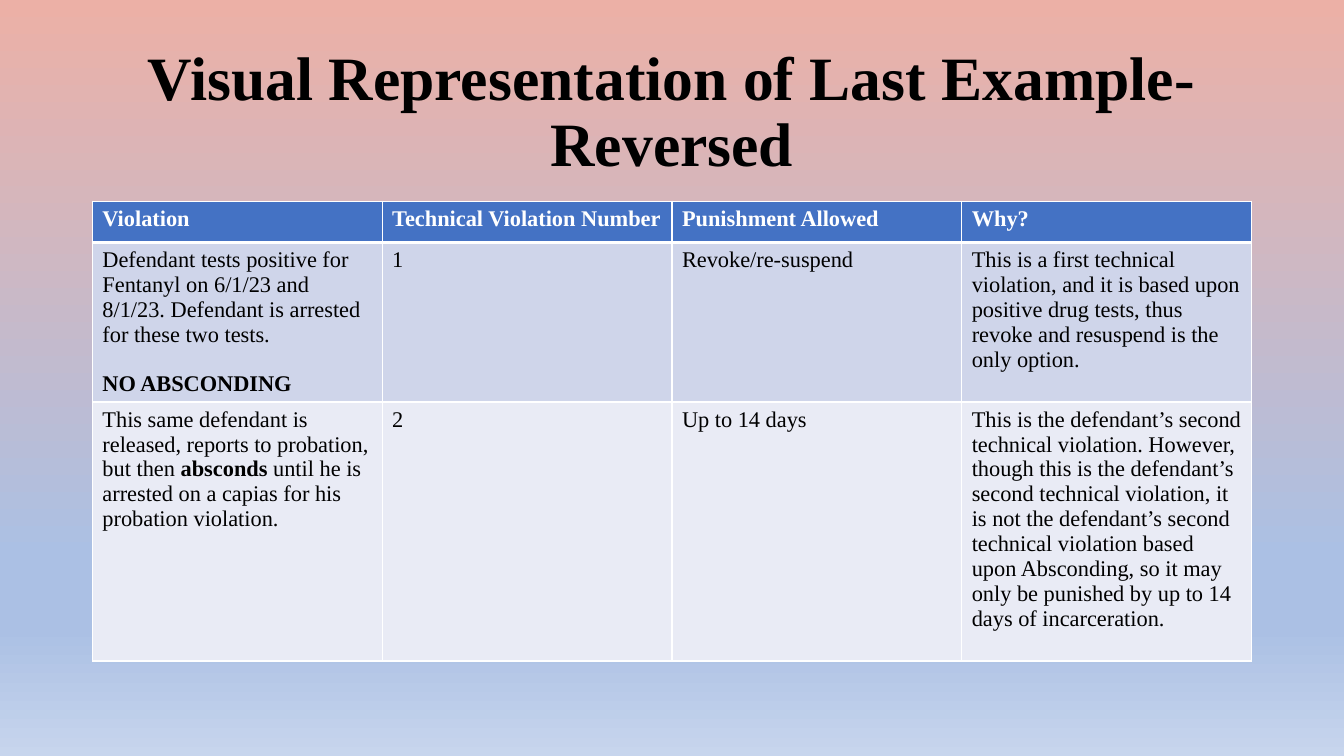
from lxml.etree import SubElement
from pptx import Presentation
from pptx.dml.color import RGBColor as Color
from pptx.enum.text import MSO_ANCHOR as Anchor, MSO_AUTO_SIZE as AutoSize, PP_ALIGN as Align
from pptx.oxml.ns import qn
from pptx.util import Pt

COLORS = {
    "text": "000000", "white": "FFFFFF", "header": "4472C4",
    "odd": "CFD5EA", "even": "E9EBF5",
    "rose": "ECB0A6", "blue": "ABC0E4", "pale": "C7D5ED",
}
GRADIENT = [(0, "rose"), (74, "blue"), (83, "blue"), (100, "pale")]
COLUMN_WIDTH = 207
ROW_HEIGHTS = [29.5, 114, 185]
BLANK_LINE = 17.7

HEADINGS = ["Violation", "Technical Violation Number", "Punishment Allowed", "Why?"]
VIOLATIONS = [
    [
        [
            [("Defendant tests positive for Fentanyl on 6/1/23 and 8/1/23. Defendant is arrested", False)],
            [("for these two tests.", False)],
            [("NO ABSCONDING", True)],
        ],
        [[("1", False)]],
        [[("Revoke/re-suspend", False)]],
        [[("This is a first technical violation, and it is based upon positive drug tests, "
           "thus revoke and resuspend is the only option.", False)]],
    ],
    [
        [[
            ("This same defendant is released, reports to probation, but then ", False),
            ("absconds ", True),
            ("until he is arrested on a capias for his probation violation.", False),
        ]],
        [[("2", False)]],
        [[("Up to 14 days", False)]],
        [[("This is the defendant’s second technical violation. However, though this is "
           "the defendant’s second technical violation, it is not the defendant’s second "
           "technical violation based upon Absconding, so it may only be punished by up "
           "to 14 days of incarceration.", False)]],
    ],
]


def apply(target, values):
    """Set every attribute in values on target."""
    for name, value in values.items():
        setattr(target, name, value)


class SlideBuilder:
    """Hold the style and the current slide."""

    font = "Times New Roman"

    def __init__(self, slide):
        """Keep the slide to draw on."""
        self.slide = slide

    def background(self, stops):
        """Fill the background with a gradient running from top to bottom."""
        fill = self.slide.background.fill
        fill.gradient()
        fill.gradient_angle = 270
        stop_list = next(self.slide.element.iter(qn("a:gsLst")))
        for stop in list(stop_list):
            stop_list.remove(stop)
        for position, color in stops:
            stop = SubElement(stop_list, qn("a:gs"), pos=str(position * 1000))
            SubElement(stop, qn("a:srgbClr"), val=COLORS[color])

    def run(self, paragraph, text, size, color, bold):
        """Add one formatted run to a paragraph."""
        run = paragraph.add_run()
        run.text = text
        apply(run.font, {"name": self.font, "size": Pt(size), "bold": bold})
        run.font.color.rgb = Color.from_string(COLORS[color])

    def title(self, text, left, top, width, height):
        """Place and format the title placeholder."""
        shape = self.slide.shapes.title
        apply(shape, {"left": Pt(left), "top": Pt(top), "width": Pt(width), "height": Pt(height)})
        apply(shape.text_frame, {"word_wrap": True, "auto_size": AutoSize.NONE,
                                 "vertical_anchor": Anchor.MIDDLE})
        paragraph = shape.text_frame.paragraphs[0]
        apply(paragraph, {"alignment": Align.CENTER, "line_spacing": 0.9})
        self.run(paragraph, text, 44, "text", True)

    def borders(self, cell, top, bottom):
        """Draw white borders around a cell."""
        properties = cell._tc.get_or_add_tcPr()
        for side, width in {"L": 1, "R": 1, "T": top, "B": bottom}.items():
            line = SubElement(properties, qn(f"a:ln{side}"), w=str(Pt(width)))
            SubElement(SubElement(line, qn("a:solidFill")), qn("a:srgbClr"), val=COLORS["white"])

    def cell(self, cell, paragraphs, fill, color, top=1, bottom=1):
        """Fill one table cell, setting a closing bold paragraph apart."""
        self.borders(cell, top, bottom)
        cell.fill.solid()
        cell.fill.fore_color.rgb = Color.from_string(COLORS[fill])
        for index, runs in enumerate(paragraphs):
            frame = cell.text_frame
            paragraph = frame.add_paragraph() if index else frame.paragraphs[0]
            if index and runs[0][1]:
                paragraph.space_before = Pt(BLANK_LINE)
            for text, bold in runs:
                self.run(paragraph, text, 16, color, bold)

    def table(self, headings, rows, left, top):
        """Add a table with a header row and banded rows."""
        count = len(headings)
        table = self.slide.shapes.add_table(
            len(rows) + 1, count, Pt(left), Pt(top),
            Pt(COLUMN_WIDTH * count), Pt(sum(ROW_HEIGHTS))).table
        for column in table.columns:
            column.width = Pt(COLUMN_WIDTH)
        for row, height in zip(table.rows, ROW_HEIGHTS):
            row.height = Pt(height)
        for index, heading in enumerate(headings):
            self.cell(table.cell(0, index), [[(heading, True)]], "header", "white", bottom=3)
        for number, row in enumerate(rows, 1):
            for index, paragraphs in enumerate(row):
                self.cell(table.cell(number, index), paragraphs,
                          "odd" if number % 2 else "even", "text", top=3 if number == 1 else 1)


def main():
    """Build and save the presentation."""
    presentation = Presentation()
    apply(presentation, {"slide_width": Pt(960), "slide_height": Pt(540)})
    builder = SlideBuilder(presentation.slides.add_slide(presentation.slide_layouts[5]))
    builder.background(GRADIENT)
    builder.title("Visual Representation of Last Example- Reversed", 66, 28.75, 828, 104.4)
    builder.table(HEADINGS, VIOLATIONS, 66, 143.75)
    presentation.save("out.pptx")


if __name__ == "__main__":
    main()
